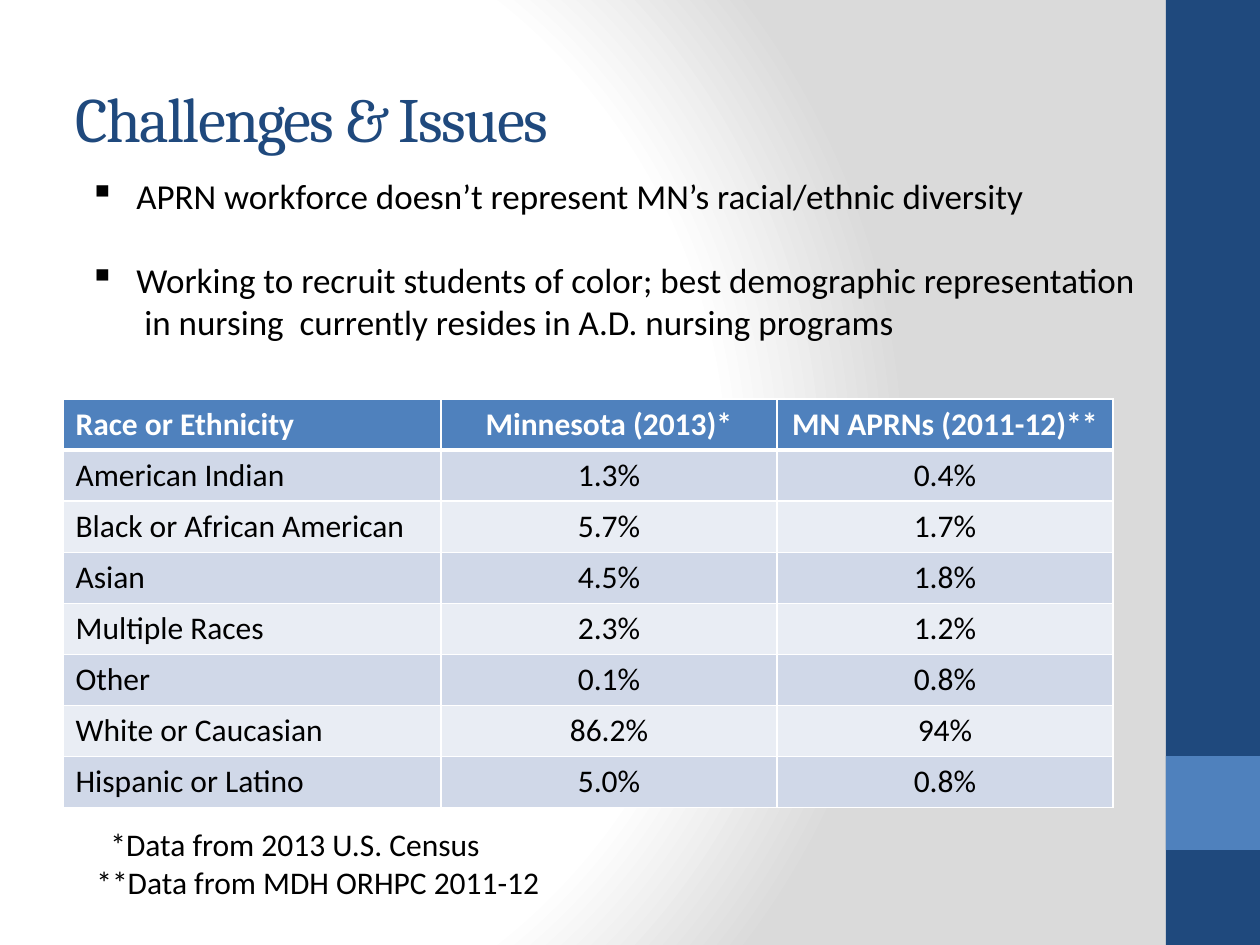
from lxml.etree import SubElement, fromstring
from pptx import Presentation
from pptx.dml.color import RGBColor
from pptx.enum.shapes import MSO_SHAPE as Shape
from pptx.enum.text import MSO_ANCHOR as Anchor, MSO_AUTO_SIZE as AutoSize, PP_ALIGN as Align
from pptx.oxml.ns import nsdecls, qn
from pptx.util import Pt

EMU_PER_PX = 914400 / 126
SLIDE_W, SLIDE_H = 1260, 945
COLORS = {
    "navy": "1F497D", "blue": "4F81BD", "band_dark": "D0D8E8",
    "band_light": "E9EDF4", "white": "FFFFFF", "black": "000000", "gray": "DADADA",
}
HEADINGS = ("Race or Ethnicity", "Minnesota (2013)*", "MN APRNs (2011-12)**")
POPULATION = [
    ("American Indian", "1.3%", "0.4%"),
    ("Black or African American", "5.7%", "1.7%"),
    ("Asian", "4.5%", "1.8%"),
    ("Multiple Races", "2.3%", "1.2%"),
    ("Other", "0.1%", "0.8%"),
    ("White or Caucasian", "86.2%", "94%"),
    ("Hispanic or Latino", "5.0%", "0.8%"),
]


def px(length):
    return round(length * EMU_PER_PX)


def rgb(name):
    return RGBColor.from_string(COLORS[name])


def style(paragraph, size, color="black", face="Calibri", bold=False):
    for run in paragraph.runs:
        font = run.font
        font.size, font.name, font.bold = Pt(size), face, bold
        font.color.rgb = rgb(color)


def indent(paragraph, margin, hanging=0, bullet=None):
    props = paragraph._p.get_or_add_pPr()
    props.set("marL", str(px(margin)))
    props.set("indent", str(-px(hanging)))
    if bullet:
        SubElement(props, qn("a:buChar")).set("char", bullet)


def add_text(slide, box, lines, size, wrap=False):
    frame = slide.shapes.add_textbox(*map(px, box)).text_frame
    frame.word_wrap = wrap
    frame.auto_size = AutoSize.NONE if wrap else AutoSize.SHAPE_TO_FIT_TEXT
    frame.text = "\n".join(lines)
    for paragraph in frame.paragraphs:
        style(paragraph, size)
    return frame


def add_background(slide):
    stops = "".join(
        f'<a:gs pos="{pos}"><a:srgbClr val="{COLORS[name]}"/></a:gs>'
        for pos, name in ((0, "white"), (75000, "white"), (100000, "gray")))
    slide.element.cSld.insert(0, fromstring(
        f'<p:bg {nsdecls("p", "a")}><p:bgPr><a:gradFill rotWithShape="1">'
        f'<a:gsLst>{stops}</a:gsLst><a:path path="circle">'
        '<a:fillToRect l="20000" t="50000" r="100000" b="50000"/></a:path>'
        '</a:gradFill><a:effectLst/></p:bgPr></p:bg>'))


def add_side_band(slide, left, top, width, height):
    # Full-height band with a square accent
    for y, h, color in ((0, height, "navy"), (height * 4 // 5, width, "blue")):
        bar = slide.shapes.add_shape(Shape.RECTANGLE, px(left), px(top + y), px(width), px(h))
        bar.shadow.inherit = False
        bar.fill.solid()
        bar.fill.fore_color.rgb = rgb(color)
        bar.line.fill.background()


def add_title(slide, *box):
    frame = add_text(slide, box, ["Challenges & Issues"], 36, wrap=True)
    frame.vertical_anchor = Anchor.MIDDLE
    heading = frame.paragraphs[0]
    style(heading, 36, "navy", "Cambria")
    heading.runs[0].font._element.set("spc", "-100")


def add_bullets(slide, *box):
    frame = add_text(slide, box, [
        "APRN workforce doesn’t represent MN’s racial/ethnic diversity",
        "Working to recruit students of color; best demographic representation",
        "in nursing  currently resides in A.D. nursing programs",
    ], 20)
    workforce, recruiting, continuation = frame.paragraphs
    recruiting.space_before = Pt(24)
    for point in (workforce, recruiting):
        indent(point, 47, 47, "▪")
    indent(continuation, 55)


def add_borders(cell, bottom):
    props = cell._tc.get_or_add_tcPr()
    for index, (side, width) in enumerate((("L", 1), ("R", 1), ("T", 1), ("B", bottom))):
        props.insert(index, fromstring(
            f'<a:ln{side} {nsdecls("a")} w="{Pt(width)}"><a:solidFill>'
            f'<a:srgbClr val="{COLORS["white"]}"/></a:solidFill></a:ln{side}>'))


def add_population_table(slide, left, top, width, row_height):
    rows = [HEADINGS, *POPULATION]
    table = slide.shapes.add_table(
        len(rows), len(HEADINGS), px(left), px(top), px(width), px(row_height * len(rows))).table
    # The first column is wider; the other two share the rest
    first = width * 9 // 25
    for column, share in zip(table.columns, (first, (width - first) / 2, (width - first) / 2)):
        column.width = px(share)
    for r, values in enumerate(rows):
        table.rows[r].height = px(row_height)
        header = r == 0
        fill = "blue" if header else ("band_light", "band_dark")[r % 2]
        for c, value in enumerate(values):
            cell = table.cell(r, c)
            cell.text = value
            cell.fill.solid()
            cell.fill.fore_color.rgb = rgb(fill)
            paragraph = cell.text_frame.paragraphs[0]
            paragraph.alignment = Align.CENTER if c else Align.LEFT
            style(paragraph, 18, "white" if header else "black", bold=header)
            add_borders(cell, 3 if header else 1)


def add_footnotes(slide, *box):
    frame = add_text(slide, box, [
        "*Data from 2013 U.S. Census", "**Data from MDH ORHPC 2011-12"], 18)
    indent(frame.paragraphs[0], 14)


def main():
    deck = Presentation()
    deck.slide_width, deck.slide_height = px(SLIDE_W), px(SLIDE_H)
    slide = deck.slides.add_slide(deck.slide_layouts[6])
    add_background(slide)
    add_side_band(slide, 1166, 0, 94, SLIDE_H)
    add_title(slide, 63, 38, 1050, 158)
    add_population_table(slide, 63, 399, 1050, 51)
    add_footnotes(slide, 84, 819, 481, 89)
    add_bullets(slide, 77, 168, 1081, 183)
    deck.save("out.pptx")


if __name__ == "__main__":
    main()
